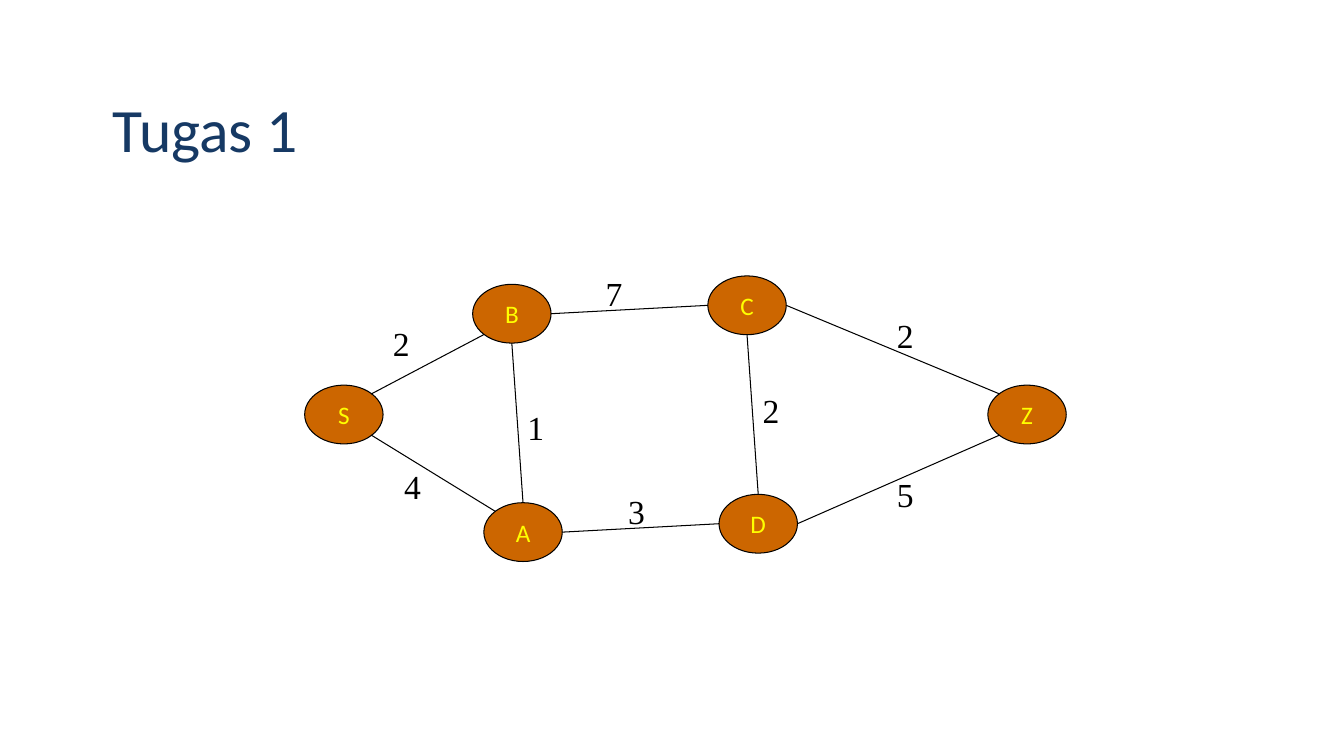
from pptx import Presentation
from pptx.dml.color import RGBColor
from pptx.enum.shapes import MSO_CONNECTOR, MSO_SHAPE
from pptx.enum.text import MSO_ANCHOR, MSO_AUTO_SIZE, PP_ALIGN
from pptx.oxml.ns import qn
from pptx.util import Inches, Pt
from lxml import etree

STRAIGHT, OVAL = MSO_CONNECTOR.STRAIGHT, MSO_SHAPE.OVAL
TOP, MIDDLE = MSO_ANCHOR.TOP, MSO_ANCHOR.MIDDLE
LEFT, CENTER = PP_ALIGN.LEFT, PP_ALIGN.CENTER
GROW = MSO_AUTO_SIZE.SHAPE_TO_FIT_TEXT

COLORS = {"title": "163964", "node": "CC6600", "node_text": "FFFF00", "ink": "000000"}

# The slide is a grid of 120 columns and 90 rows
WIDTH, HEIGHT = Inches(13.33), Inches(7.5)
COLUMN, ROW = WIDTH / 120, HEIGHT / 90
TITLE_BOX = (9.2, 8.25, 87, 15)
GRAPH_BOX = (27.2, 32.85, 68, 34)

# Column and row of each node inside the graph box
NODE_SIZE = 7
NODES = {"S": (0, 13), "A": (16, 27), "B": (15, 1),
         "C": (36, 0), "D": (37, 26), "Z": (61, 13)}

# Points on an ellipse, as shares of its width and height
NEAR, FAR = 0.15, 0.85
PORTS = {"top": (0.5, 0), "bottom": (0.5, 1), "left": (0, 0.5), "right": (1, 0.5),
         "top left": (NEAR, NEAR), "top right": (FAR, NEAR),
         "bottom left": (NEAR, FAR), "bottom right": (FAR, FAR)}

# Start node and port, end node and port, weight, column and row of the weight
EDGES = [
    ("S", "top right", "B", "bottom left", 2, 7, 5),
    ("A", "top", "B", "bottom", 1, 19, 15),
    ("S", "bottom right", "A", "top left", 4, 8, 22),
    ("B", "right", "C", "left", 7, 26, -1),
    ("D", "left", "A", "right", 3, 28, 25),
    ("C", "right", "Z", "top left", 2, 52, 4),
    ("D", "top", "C", "bottom", 2, 40, 13),
    ("D", "right", "Z", "bottom left", 5, 52, 23),
]
WEIGHT_SIZE = (3.3, 6.1)


def color(name):
    return RGBColor.from_string(COLORS[name])


def emu(column, row):
    return round(column * COLUMN), round(row * ROW)


def write(box, text, *, size, ink, font="Calibri", align=LEFT, anchor=TOP,
          wrap=False, spacing=None):
    frame = box.text_frame
    frame.word_wrap, frame.vertical_anchor = wrap, anchor
    para = frame.paragraphs[0]
    para.alignment, para.line_spacing = align, spacing
    span = para.add_run()
    span.text = text
    span.font.size, span.font.name = Pt(size), font
    span.font.color.rgb = color(ink)


def add_title(page, box, text):
    column, row, columns, rows = box
    title = page.shapes.add_textbox(*emu(column, row), *emu(columns, rows))
    write(title, text, size=44, ink="title", anchor=MIDDLE, wrap=True, spacing=0.9)


def add_graph(page, box):
    left, top = box[:2]

    def port_at(name, port):
        column, row = NODES[name]
        across, down = PORTS[port]
        return emu(left + column + across * NODE_SIZE, top + row + down * NODE_SIZE)

    # Nodes
    for name, (column, row) in NODES.items():
        node = page.shapes.add_shape(OVAL, *emu(left + column, top + row),
                                     *emu(NODE_SIZE, NODE_SIZE))
        node.shadow.inherit = False
        node.fill.solid()
        node.fill.fore_color.rgb = color("node")
        node.line.color.rgb, node.line.width = color("ink"), Pt(0.75)
        write(node, name, size=18, ink="node_text", align=CENTER, anchor=MIDDLE)

    # Edges and their weights
    for start, start_port, end, end_port, weight, column, row in EDGES:
        edge = page.shapes.add_connector(STRAIGHT, *port_at(start, start_port),
                                         *port_at(end, end_port))
        edge.line.color.rgb, edge.line.width = color("ink"), Pt(0.75)
        etree.SubElement(edge.element.spPr, qn("a:effectLst"))
        label = page.shapes.add_textbox(*emu(left + column, top + row), *emu(*WEIGHT_SIZE))
        label.text_frame.auto_size = GROW
        write(label, str(weight), size=24, ink="ink", font="Times New Roman")


def main():
    deck = Presentation()
    deck.slide_width, deck.slide_height = WIDTH, HEIGHT
    page = deck.slides.add_slide(deck.slide_layouts[6])
    add_title(page, TITLE_BOX, "Tugas 1")
    add_graph(page, GRAPH_BOX)
    deck.save("out.pptx")


if __name__ == "__main__":
    main()
